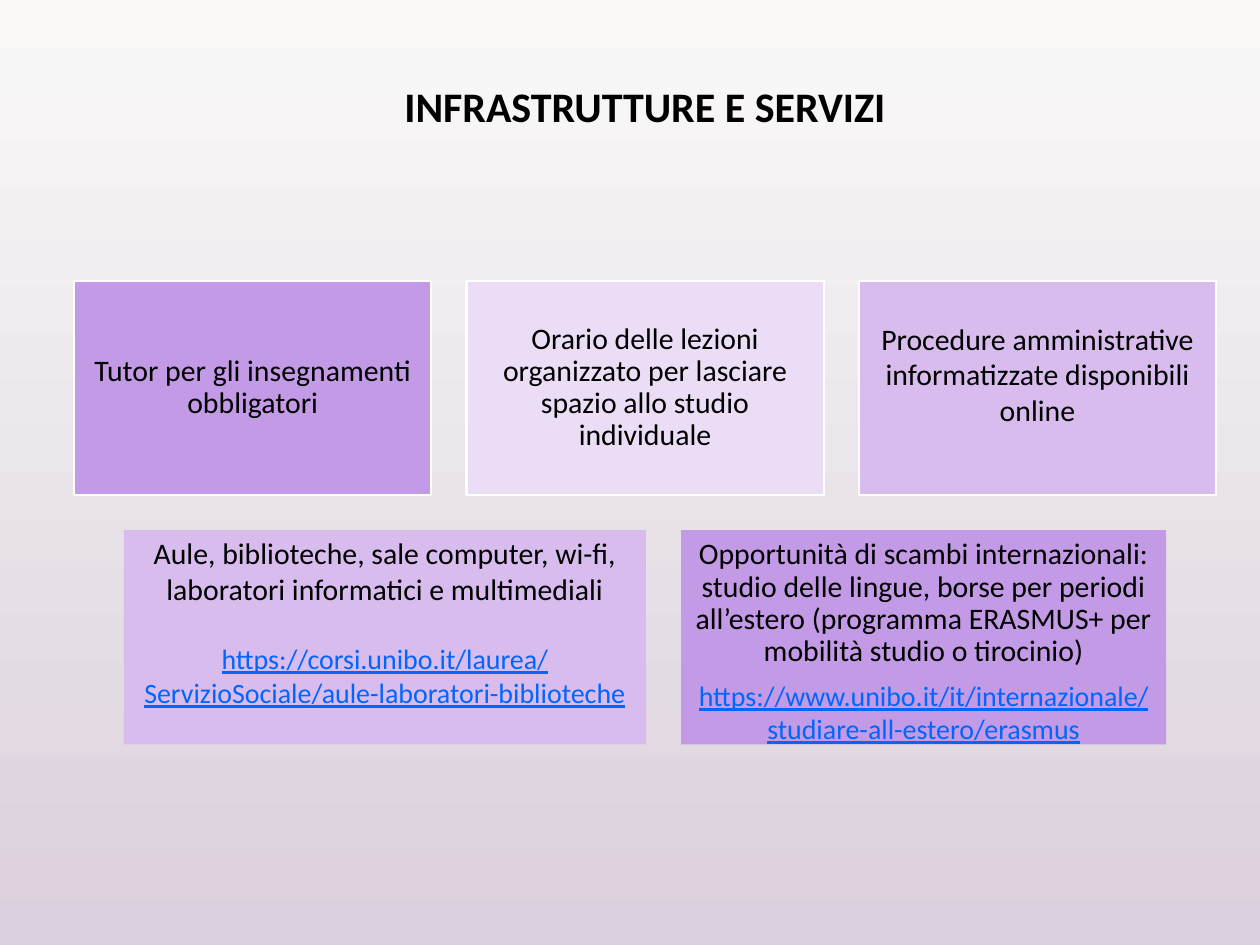
"""Build the slide on infrastructure and services."""
from dataclasses import dataclass

import pptx
import pptx.dml.color
import pptx.enum.shapes
import pptx.enum.text
import pptx.util
from pptx.util import Cm

COLORS = {
    "background_top": "FAF9F8",
    "background_bottom": "DBD0DD",
    "strong": "C39AE5",
    "medium": "D7BCED",
    "light": "EBDDF6",
    "outline": "FFFFFF",
    "text": "000000",
    "link": "0066FF",
}
FONT = "Calibri"
GAP = Cm(0.71)
INSET = 0.18


@dataclass
class Card:
    """Describe one card: its text, look and inner spacing."""

    text: str
    fill: str
    width: float = 7.2
    address: str = ""
    address_gap: float = 0
    line_spacing: float = 0.9
    anchor: str = "MIDDLE"
    top_inset: float = INSET
    bottom_inset: float = INSET
    outlined: bool = False


TOP_CARDS = [
    Card("Tutor per gli insegnamenti obbligatori", "strong", outlined=True),
    Card("Orario delle lezioni organizzato per lasciare spazio allo studio individuale",
         "light", outlined=True),
    Card("Procedure amministrative informatizzate disponibili online", "medium",
         line_spacing=1, bottom_inset=0.74, outlined=True),
]
BOTTOM_CARDS = [
    Card("Aule, biblioteche, sale computer, wi-fi, laboratori informatici e multimediali",
         "medium", width=10.52, line_spacing=1, anchor="TOP", top_inset=0.1,
         address="https://corsi.unibo.it/laurea/ServizioSociale/aule-laboratori-biblioteche",
         address_gap=20),
    Card("Opportunità di scambi internazionali: studio delle lingue, borse per periodi "
         "all’estero (programma ERASMUS+ per mobilità studio o tirocinio)",
         "strong", width=9.78, anchor="TOP",
         address="https://www.unibo.it/it/internazionale/studiare-all-estero/erasmus",
         address_gap=6),
]


def color(name):
    """Return the named colour."""
    return pptx.dml.color.RGBColor.from_string(COLORS[name])


def write(paragraph, text, size, color_name="text"):
    """Fill a centred paragraph with text."""
    paragraph.text = text
    paragraph.alignment = pptx.enum.text.PP_ALIGN.CENTER
    paragraph.font.name = FONT
    paragraph.font.size = pptx.util.Pt(size)
    paragraph.font.color.rgb = color(color_name)


def paint_background(slide):
    """Shade the slide from top to bottom."""
    fill = slide.background.fill
    fill.gradient()
    fill.gradient_angle = 270
    for stop, name in zip(fill.gradient_stops, ("background_top", "background_bottom")):
        stop.color.rgb = color(name)


def add_title(slide, left, top, width, height):
    """Place the heading in its box."""
    frame = slide.shapes.add_textbox(left, top, width, height).text_frame
    frame.word_wrap = True
    paragraph = frame.paragraphs[0]
    write(paragraph, "INFRASTRUTTURE E SERVIZI", 24)
    paragraph.font.bold = True
    paragraph.line_spacing = pptx.util.Pt(22)


def add_card(slide, card, left, top, width, height):
    """Draw one card with its text and optional web address."""
    shape = slide.shapes.add_shape(
        pptx.enum.shapes.MSO_SHAPE.RECTANGLE, left, top, width, height)
    shape.shadow.inherit = False
    shape.fill.solid()
    shape.fill.fore_color.rgb = color(card.fill)
    if card.outlined:
        shape.line.color.rgb = color("outline")
        shape.line.width = pptx.util.Pt(1.25)
    else:
        shape.line.fill.background()

    frame = shape.text_frame
    frame.word_wrap = True
    frame.vertical_anchor = pptx.enum.text.MSO_ANCHOR[card.anchor]
    frame.margin_left = frame.margin_right = Cm(INSET)
    frame.margin_top = Cm(card.top_inset)
    frame.margin_bottom = Cm(card.bottom_inset)
    paragraph = frame.paragraphs[0]
    write(paragraph, card.text, 17)
    paragraph.line_spacing = card.line_spacing
    if card.address:
        paragraph = frame.add_paragraph()
        write(paragraph, card.address, 16, "link")
        paragraph.font.underline = True
        paragraph.space_before = pptx.util.Pt(card.address_gap)


def add_card_row(slide, cards, left, top, width, height):
    """Centre a row of cards in its box with equal gaps."""
    widths = [Cm(card.width) for card in cards]
    x = left + (width - sum(widths) - GAP * (len(cards) - 1)) // 2
    for card, card_width in zip(cards, widths):
        add_card(slide, card, x, top, card_width, height)
        x += card_width + GAP


def main():
    """Build and save the presentation."""
    presentation = pptx.Presentation()
    presentation.slide_width = Cm(25.4)
    presentation.slide_height = Cm(19.05)
    slide = presentation.slides.add_slide(presentation.slide_layouts[6])
    left, width, row_top, row_height = Cm(1.5), Cm(23.01), Cm(5.66), Cm(4.32)
    paint_background(slide)
    add_title(slide, left, Cm(1.73), width, Cm(1.8))
    for index, cards in enumerate((TOP_CARDS, BOTTOM_CARDS)):
        add_card_row(slide, cards, left, row_top + index * (row_height + GAP),
                     width, row_height)
    presentation.save("out.pptx")


if __name__ == "__main__":
    main()
